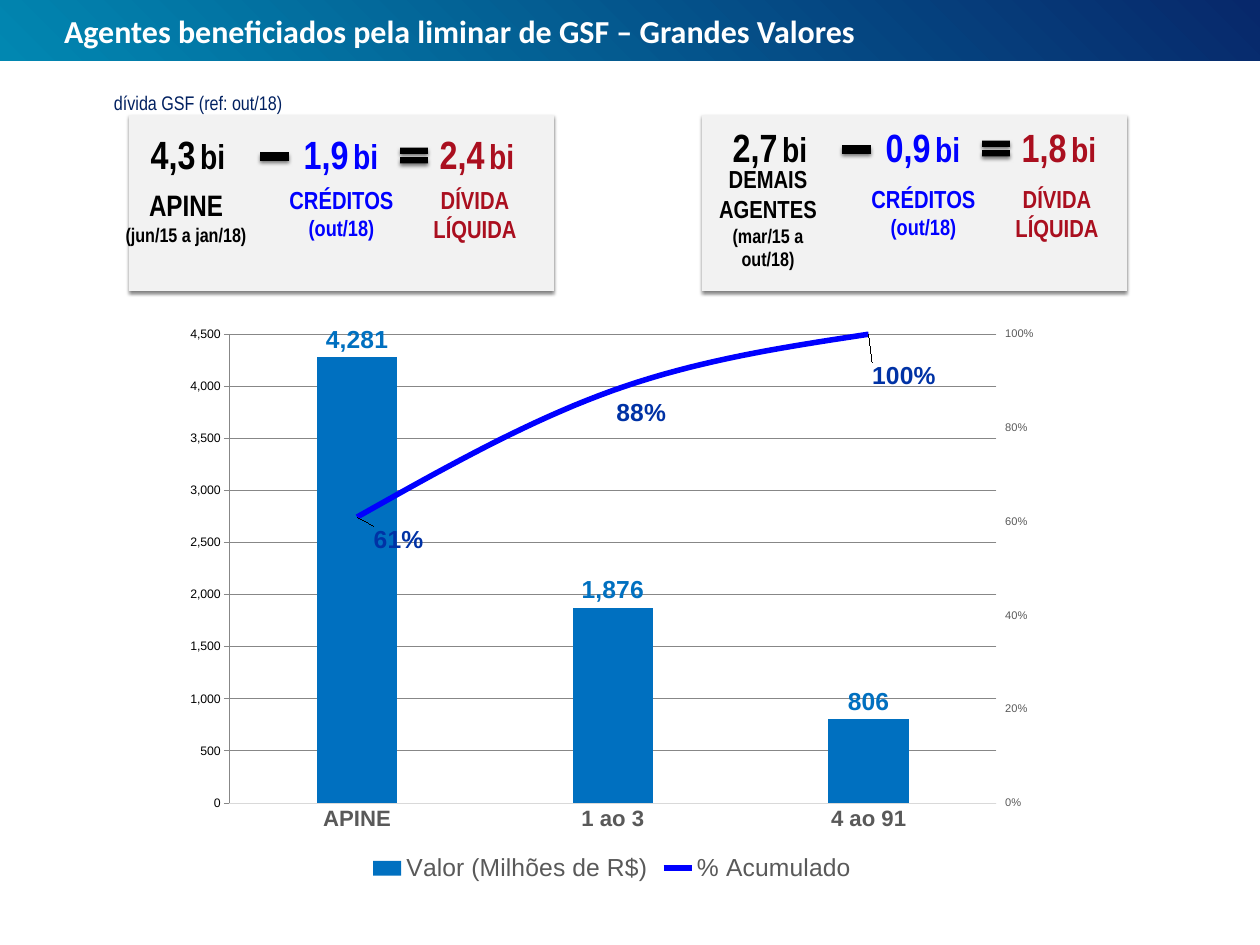
from dataclasses import dataclass

from pptx import Presentation
from pptx.chart.axis import ValueAxis
from pptx.chart.data import CategoryChartData
from pptx.dml.color import RGBColor
from pptx.enum.chart import XL_CHART_TYPE, XL_LABEL_POSITION, XL_LEGEND_POSITION, XL_MARKER_STYLE, XL_TICK_MARK
from pptx.enum.shapes import MSO_SHAPE
from pptx.enum.text import MSO_ANCHOR, MSO_AUTO_SIZE, PP_ALIGN
from pptx.oxml import parse_xml
from pptx.oxml.ns import nsdecls
from pptx.util import Pt

RECT, MINUS, EQUAL = MSO_SHAPE.RECTANGLE, MSO_SHAPE.MATH_MINUS, MSO_SHAPE.MATH_EQUAL
LEFT, CENTER, MIDDLE = PP_ALIGN.LEFT, PP_ALIGN.CENTER, MSO_ANCHOR.MIDDLE
GROW, FIXED = MSO_AUTO_SIZE.SHAPE_TO_FIT_TEXT, MSO_AUTO_SIZE.NONE
ABOVE, BESIDE = XL_LABEL_POSITION.OUTSIDE_END, XL_LABEL_POSITION.RIGHT
NO_TICK, OUT_TICK = XL_TICK_MARK.NONE, XL_TICK_MARK.OUTSIDE


@dataclass(frozen=True)
class Theme:
    band: tuple = ("07286B", "0187B1")
    title: str = "FFFFFF"
    card: str = "F2F2F2"
    gross: str = "000000"
    credit: str = "0000FF"
    debt: str = "AA0F1F"
    note: str = "002060"
    bar: str = "0070C0"
    line: str = "0000FF"
    share: str = "0032A5"
    axis: str = "595959"
    grid: str = "D9D9D9"
    heading_font: str = "Calibri"
    narrow_font: str = "Arial Narrow"
    chart_font: str = "Arial"
    title_size: int = 26
    figure_size: int = 32
    unit_size: int = 28
    large: int = 24
    label: int = 20
    medium: int = 18
    small: int = 16
    tick: int = 9


THEME = Theme()

TITLE = "Agentes beneficiados pela liminar de GSF – Grandes Valores"
NOTE = "dívida GSF (ref: out/18)"
CARDS = [
    {"x": 129, "column": 122, "figures_y": 125, "captions_y": 179, "figures": ("4,3", "1,9", "2,4"),
     "agent": [("APINE", THEME.large), ("(jun/15 a jan/18)", THEME.small)], "agent_y": 170, "agent_h": 93},
    {"x": 702, "column": 704, "figures_y": 118, "captions_y": 178, "figures": ("2,7", "0,9", "1,8"),
     "agent": [("DEMAIS AGENTES", THEME.label), ("(mar/15 a out/18)", THEME.small)], "agent_y": 159, "agent_h": 117},
]
FIGURE_COLUMNS = [(0, THEME.gross), (153, THEME.credit), (289, THEME.debt)]
CAPTIONS = [
    (128, 183, 67, THEME.credit, [("CRÉDITOS", THEME.label), ("(out/18)", THEME.medium)]),
    (293, 120, 70, THEME.debt, [("DÍVIDA\vLÍQUIDA", THEME.label)]),
]
OPERATORS = [(MINUS, 133, 14, 39, 35), (EQUAL, 273, 17, 38, 27)]

GROUPS = ["APINE", "1 ao 3", "4 ao 91"]
AMOUNTS = ("Valor (Milhões de R$)", [4281, 1876, 806])
SHARES = ("% Acumulado", [0.61, 0.88, 1])
SHARE_SHIFTS = [(13, 23), (0, 23), (0, 42)]
AMOUNT_FORMAT = '_-* #,##0_-;\\-* #,##0_-;_-* "-"??_-;_-@_'
CHART_BOX = (174, 316, 876, 571)
PLOT_BOX = (229, 334, 767, 469)

EMU_PER_PX = 10320


def px(*lengths):
    return [length * EMU_PER_PX for length in lengths]


def assign(target, **values):
    for name, value in values.items():
        setattr(target, name, value)


def style(font, face, size, color, bold=False):
    assign(font, name=face, size=Pt(size), bold=bold)
    font.color.rgb = RGBColor.from_string(color)


def paint(fill, color):
    fill.solid()
    fill.fore_color.rgb = RGBColor.from_string(color)


def stroke(line, color, width):
    paint(line.fill, color)
    line.width = Pt(width)


def frame_text(frame, inset, **values):
    inset = inset * EMU_PER_PX
    assign(frame, word_wrap=True, vertical_anchor=MIDDLE, margin_left=inset, margin_right=inset,
           margin_top=inset, margin_bottom=inset, **values)


def add_text(slide, box, paragraphs, color, bold=True, align=CENTER):
    frame = slide.shapes.add_textbox(*px(*box)).text_frame
    frame_text(frame, 5, auto_size=GROW)
    for row, runs in enumerate(paragraphs):
        paragraph = frame.add_paragraph() if row else frame.paragraphs[0]
        paragraph.alignment = align
        for text, size in runs:
            for part, words in enumerate(text.split("\v")):
                if part:
                    paragraph.add_line_break()
                run = paragraph.add_run()
                run.text = words
                style(run.font, THEME.narrow_font, size, color, bold)


def add_raised(slide, kind, box, color):
    raised = slide.shapes.add_shape(kind, *px(*box))
    paint(raised.fill, color)
    raised.line.fill.background()
    raised.shadow.inherit = False
    raised.element.spPr.xpath("a:effectLst")[0].append(parse_xml(
        f'<a:outerShdw {nsdecls("a")} blurRad="{Pt(3)}" dist="{Pt(2)}" dir="5400000" rotWithShape="0">'
        '<a:srgbClr val="000000"><a:alpha val="50000"/></a:srgbClr></a:outerShdw>'))


def add_header(slide):
    band = slide.shapes.add_shape(RECT, *px(0, 0, 1260, 61))
    band.shadow.inherit = False
    band.line.fill.background()
    band.fill.gradient()
    band.fill.gradient_angle = 225
    for stop, color, position in zip(band.fill.gradient_stops, THEME.band, (0, 1)):
        stop.color.rgb = RGBColor.from_string(color)
        stop.position = position
    slide.shapes.element.insert(2, band.element)
    title = slide.shapes.title
    assign(title, **dict(zip(("left", "top", "width", "height"), px(60, 0, 1200, 61))))
    title.text_frame.text = TITLE
    frame_text(title.text_frame, 4, auto_size=FIXED)
    heading = title.text_frame.paragraphs[0]
    heading.alignment = LEFT
    style(heading.runs[0].font, THEME.heading_font, THEME.title_size, THEME.title, True)


def add_card(slide, card):
    column, figures_y = card["column"], card["figures_y"]
    add_raised(slide, RECT, (card["x"], 115, 425, 176), THEME.card)
    add_text(slide, (column - 4, card["agent_y"], 136, card["agent_h"]),
             [[line] for line in card["agent"]], THEME.gross)
    for x, width, height, color, lines in CAPTIONS:
        add_text(slide, (column + x, card["captions_y"], width, height), [[line] for line in lines], color)
    for figure, (x, color) in zip(card["figures"], FIGURE_COLUMNS):
        runs = [(figure, THEME.figure_size), (" ", THEME.small), ("bi", THEME.unit_size)]
        add_text(slide, (column + x, figures_y, 132, 58), [runs], color)
    for kind, x, y, width, height in OPERATORS:
        add_raised(slide, kind, (column + x, figures_y + y, width, height), THEME.gross)


def split_share_line(chart_space):
    bars = chart_space.xpath(".//c:barChart")[0]
    share = bars.xpath("c:ser")[1]
    for flag in share.xpath("c:invertIfNegative"):
        share.remove(flag)
    lines = parse_xml(f'<c:lineChart {nsdecls("c")}><c:grouping val="standard"/><c:varyColors val="0"/>'
                      '<c:marker val="1"/><c:axId val="5001"/><c:axId val="5002"/></c:lineChart>')
    lines.insert(2, share)
    bars.addnext(lines)
    anchor = chart_space.xpath(".//c:valAx")[-1]
    for tag, own, other, hidden, side, cross in (("valAx", 5002, 5001, 0, "r", "max"),
                                                ("catAx", 5001, 5002, 1, "b", "autoZero")):
        axis = parse_xml(
            f'<c:{tag} {nsdecls("c")}><c:axId val="{own}"/><c:scaling><c:orientation val="minMax"/></c:scaling>'
            f'<c:delete val="{hidden}"/><c:axPos val="{side}"/><c:numFmt formatCode="0%" sourceLinked="0"/>'
            f'<c:tickLblPos val="nextTo"/><c:crossAx val="{other}"/><c:crosses val="{cross}"/></c:{tag}>')
        anchor.addnext(axis)
    return ValueAxis(chart_space.xpath(".//c:valAx")[-1])


def manual_layout(x, y, extra=""):
    return parse_xml(f'<c:layout {nsdecls("c")}><c:manualLayout>{extra}'
                     f'<c:x val="{x:.3f}"/><c:y val="{y:.3f}"/></c:manualLayout></c:layout>')


def place_plot(chart_space):
    left, top, width, height = CHART_BOX
    plot_x, plot_y, plot_w, plot_h = PLOT_BOX
    layout = manual_layout((plot_x - left) / width, (plot_y - top) / height,
                           '<c:layoutTarget val="inner"/><c:xMode val="edge"/><c:yMode val="edge"/>')
    for tag, share in (("w", plot_w / width), ("h", plot_h / height)):
        layout[0].append(parse_xml(f'<c:{tag} {nsdecls("c")} val="{share:.3f}"/>'))
    area = chart_space.xpath(".//c:plotArea")[0]
    for default in area.xpath("c:layout"):
        area.remove(default)
    area.insert(0, layout)


def add_debt_chart(slide):
    data = CategoryChartData()
    data.categories = GROUPS
    data.add_series(*AMOUNTS, number_format="#,##0")
    data.add_series(*SHARES, number_format="0%")
    chart = slide.shapes.add_chart(XL_CHART_TYPE.COLUMN_CLUSTERED, *px(*CHART_BOX), data).chart
    assign(chart, has_title=False, has_legend=True)
    style(chart.font, THEME.chart_font, 10, THEME.gross)
    assign(chart.legend, position=XL_LEGEND_POSITION.BOTTOM, include_in_layout=False)
    style(chart.legend.font, THEME.chart_font, THEME.label, THEME.axis)
    right_axis = split_share_line(chart.element)
    place_plot(chart.element)

    groups, left_axis = chart.category_axis, chart.value_axis
    groups.major_tick_mark = NO_TICK
    stroke(groups.format.line, THEME.grid, 0.75)
    style(groups.tick_labels.font, THEME.chart_font, THEME.medium, THEME.axis, True)
    for axis, top, step, tick, pattern in ((left_axis, 4500, 500, NO_TICK, AMOUNT_FORMAT),
                                           (right_axis, 1, 0.2, OUT_TICK, "0%")):
        assign(axis, minimum_scale=0, maximum_scale=top, major_unit=step, major_tick_mark=tick)
        assign(axis.tick_labels, number_format=pattern, number_format_is_linked=False)
        axis.format.line.fill.background()
        style(axis.tick_labels.font, THEME.chart_font, THEME.tick, THEME.axis)
    stroke(left_axis.major_gridlines.format.line, THEME.grid, 0.75)

    columns, lines = chart.plots
    assign(columns, gap_width=219, overlap=-27, vary_by_categories=False)
    amounts, shares = columns.series[0], lines.series[0]
    paint(amounts.format.fill, THEME.bar)
    stroke(shares.format.line, THEME.line, 4.5)
    shares.smooth = True
    shares.marker.style = XL_MARKER_STYLE.NONE
    for series, pattern, position, color in ((amounts, AMOUNT_FORMAT, ABOVE, THEME.bar),
                                             (shares, "0%", BESIDE, THEME.share)):
        assign(series.data_labels, show_value=True, number_format=pattern,
               number_format_is_linked=False, position=position)
        style(series.data_labels.font, THEME.chart_font, THEME.label, color, True)
    for index in range(len(GROUPS)):
        label = shares.points[index].data_label
        style(label.font, THEME.chart_font, THEME.label, THEME.share, True)
        label.position = BESIDE
    for label, (dx, dy) in zip(chart.element.xpath(".//c:lineChart//c:dLbl"), SHARE_SHIFTS):
        label.insert(1, manual_layout(dx / CHART_BOX[2], dy / CHART_BOX[3]))


def main():
    deck = Presentation()
    deck.slide_width, deck.slide_height = px(1260, 945)
    slide = deck.slides.add_slide(deck.slide_layouts[5])
    add_header(slide)
    for card in CARDS:
        add_card(slide, card)
    add_text(slide, (109, 86, 184, 34), [[(NOTE, THEME.small)]], THEME.note, bold=False, align=LEFT)
    add_debt_chart(slide)
    deck.save("out.pptx")


if __name__ == "__main__":
    main()
